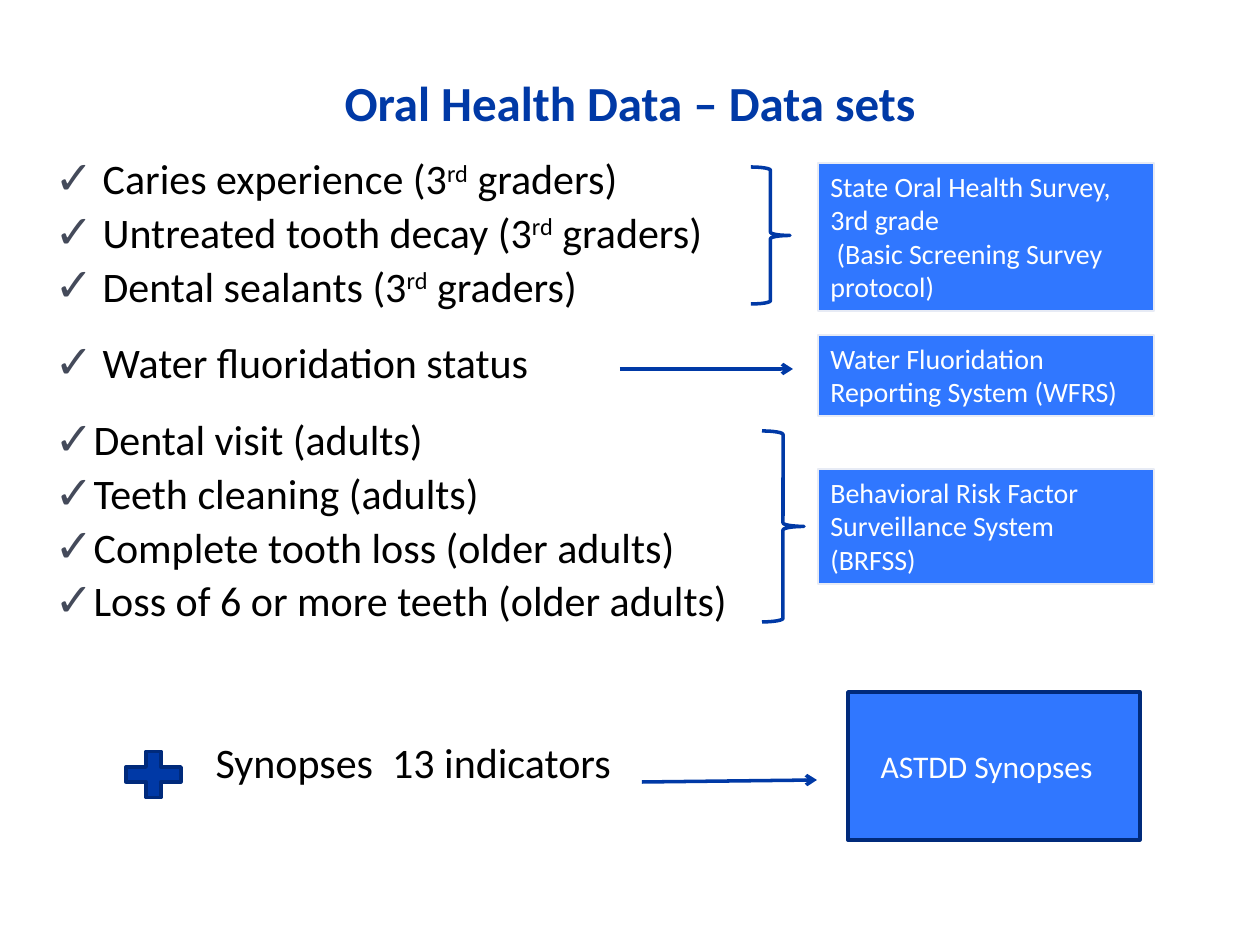
import pptx
import pptx.util
import pptx.dml.color
import pptx.enum.shapes
import pptx.enum.text
import pptx.oxml.ns
from lxml import etree

PX = 914400 / 126
FONT = "Calibri"
NAVY, DARK_NAVY, BLUE = "0039A6", "002A7B", "3077FF"
PALE, WHITE, BLACK, SLATE = "E7EBF5", "FFFFFF", "000000", "444A5A"
SHAPE = pptx.enum.shapes.MSO_SHAPE
ALIGN = pptx.enum.text.PP_ALIGN
ANCHOR = pptx.enum.text.MSO_ANCHOR
Pt = pptx.util.Pt


def px(*lengths):
    return [round(length * PX) for length in lengths]


def color(code):
    return pptx.dml.color.RGBColor.from_string(code)


deck = pptx.Presentation()
deck.slide_width, deck.slide_height = px(1260, 945)
page = deck.slides.add_slide(deck.slide_layouts[1])

# Title
title = page.shapes.title
title.left, title.top, title.width, title.height = px(63, 66, 1134, 148)
title.text_frame.vertical_anchor = ANCHOR.TOP
para = title.text_frame.paragraphs[0]
para.alignment = ALIGN.CENTER
span = para.add_run()
span.text = "Oral Health Data – Data sets"
for name, value in {"name": FONT, "size": Pt(28), "bold": True}.items():
    setattr(span.font, name, value)
span.font.color.rgb = color(NAVY)

# Indicator list: text, hanging indent in px, space before in points, ticked.
# A caret pair encloses superscript.
indicators = [
    ("Caries experience (3^rd^ graders)", 48, 0, True),
    ("Untreated tooth decay (3^rd^ graders)", 48, 4.8, True),
    ("Dental sealants (3^rd^ graders)", 48, 4.8, True),
    ("Water fluoridation status", 48, 18, True),
    ("Dental visit (adults)", 39, 18, True),
    ("Teeth cleaning (adults)", 39, 4.8, True),
    ("Complete tooth loss (older adults)", 39, 4.8, True),
    ("Loss of 6 or more teeth (older adults)", 39, 4.8, True),
    ("Synopses  13 indicators", 161, 66.5, False),
]
body = page.placeholders[1]
body.left, body.top, body.width, body.height = px(42, 152, 735, 725)
frame = body.text_frame
frame.word_wrap = True
frame.auto_size = pptx.enum.text.MSO_AUTO_SIZE.NONE
frame.vertical_anchor = ANCHOR.TOP
for index, (text, indent, before, ticked) in enumerate(indicators):
    para = frame.paragraphs[0] if index == 0 else frame.add_paragraph()
    para.level = 1
    props = para._p.get_or_add_pPr()
    margin = px(indent)[0]
    props.set("marL", str(margin))
    props.set("indent", str(-margin if ticked else 0))
    if ticked:
        tint = etree.SubElement(props, pptx.oxml.ns.qn("a:buClr"))
        etree.SubElement(tint, pptx.oxml.ns.qn("a:srgbClr"), val=SLATE)
        etree.SubElement(props, pptx.oxml.ns.qn("a:buSzPct"), val="110000")
        etree.SubElement(props, pptx.oxml.ns.qn("a:buChar"), char="✓")
    else:
        etree.SubElement(props, pptx.oxml.ns.qn("a:buNone"))
    para.line_spacing = 0.9
    para.space_before = Pt(before)
    for part, piece in enumerate(text.split("^")):
        span = para.add_run()
        span.text = piece
        span.font.name, span.font.size = FONT, Pt(24)
        span.font.color.rgb = color(BLACK)
        if part % 2:
            span.font._element.set("baseline", "30000")

# Data source boxes: place, line colour, line width, text size, lines
sources = [
    ((818, 163, 336, 148), PALE, 0.75, 16,
     ["State Oral Health Survey, 3rd grade", " (Basic Screening Survey protocol)"]),
    ((818, 335, 336, 81), PALE, 0.75, 16, ["Water Fluoridation Reporting System (WFRS)"]),
    ((818, 469, 336, 115), PALE, 0.75, 16,
     ["Behavioral Risk Factor Surveillance System (BRFSS)"]),
    ((848, 692, 292, 148), DARK_NAVY, 2, 18, ["ASTDD Synopses"]),
]
for place, edge, weight, size, lines in sources:
    box = page.shapes.add_shape(SHAPE.RECTANGLE, *px(*place))
    box.shadow.inherit = False
    box.fill.solid()
    box.fill.fore_color.rgb = color(BLUE)
    box.line.color.rgb = color(edge)
    box.line.width = Pt(weight)
    frame = box.text_frame
    frame.word_wrap = True
    frame.vertical_anchor = ANCHOR.TOP
    for index, text in enumerate(lines):
        para = frame.paragraphs[0] if index == 0 else frame.add_paragraph()
        para.alignment = ALIGN.LEFT
        span = para.add_run()
        span.text = text
        span.font.name, span.font.size = FONT, Pt(size)
        span.font.color.rgb = color(WHITE)

# The synopses label is centred, slightly left of the middle
frame.vertical_anchor = ANCHOR.MIDDLE
frame.margin_right = px(27)[0]
para.alignment = ALIGN.CENTER

# Braces and plus sign
marks = [
    (SHAPE.RIGHT_BRACE, (751, 167, 39, 137), None, NAVY),
    (SHAPE.RIGHT_BRACE, (762, 431, 42, 191), None, NAVY),
    (SHAPE.MATH_PLUS, (116, 743, 75, 63), NAVY, DARK_NAVY),
]
for kind, place, fill, edge in marks:
    mark = page.shapes.add_shape(kind, *px(*place))
    mark.shadow.inherit = False
    if fill:
        mark.fill.solid()
        mark.fill.fore_color.rgb = color(fill)
    else:
        mark.fill.background()
    mark.line.color.rgb = color(edge)
    mark.line.width = Pt(2)

# Arrows towards the boxes
for ends in [(620, 369, 793, 369), (642, 782, 817, 780)]:
    arrow = page.shapes.add_connector(
        pptx.enum.shapes.MSO_CONNECTOR.STRAIGHT, *px(*ends))
    arrow.line.color.rgb = color(NAVY)
    arrow.line.width = Pt(2)
    etree.SubElement(arrow.line._get_or_add_ln(), pptx.oxml.ns.qn("a:tailEnd"), type="arrow")
    etree.SubElement(arrow._element.spPr, pptx.oxml.ns.qn("a:effectLst"))

deck.save("out.pptx")
